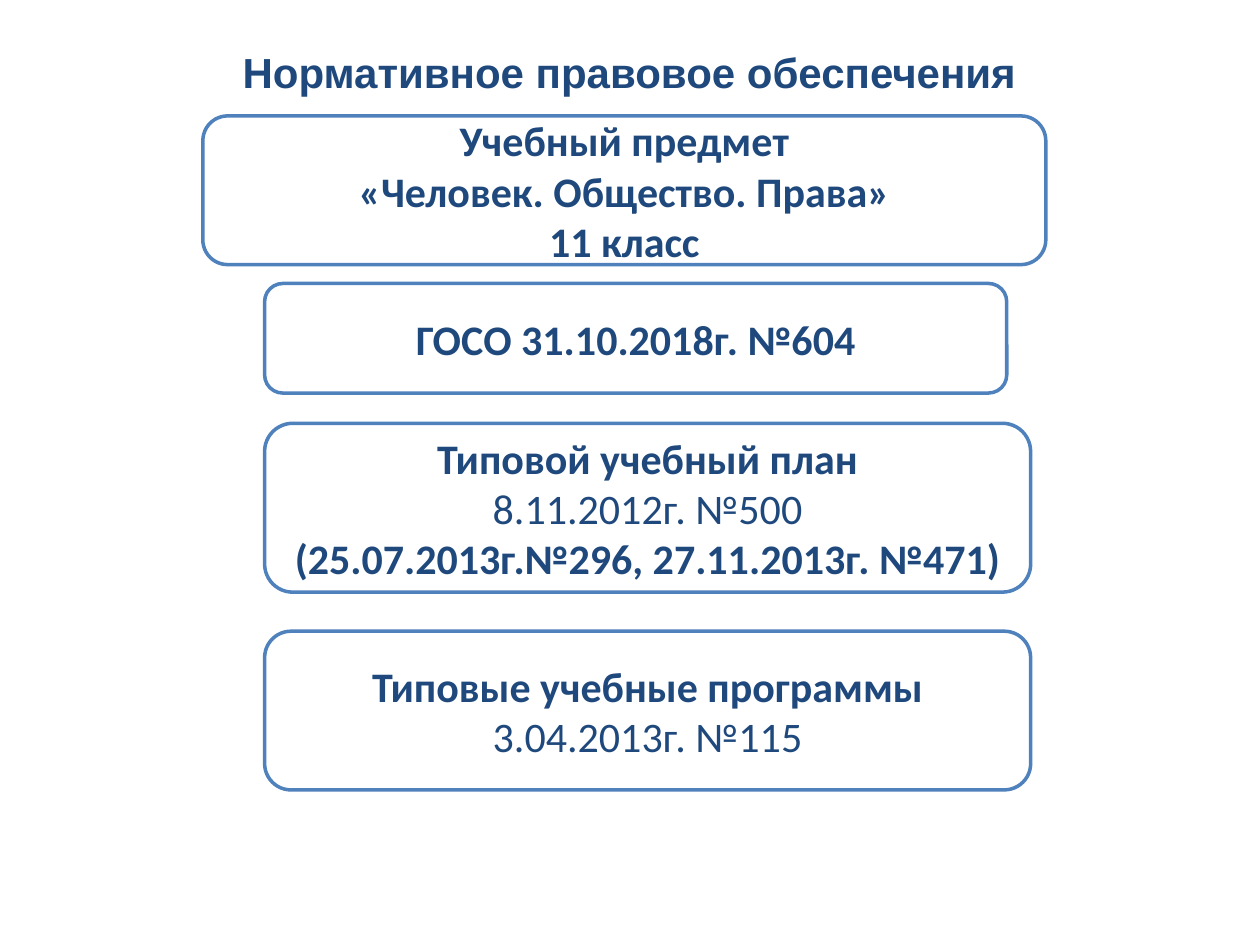
from typing import NamedTuple

from pptx import Presentation
from pptx.dml.color import RGBColor
from pptx.enum.shapes import MSO_SHAPE
from pptx.enum.text import MSO_ANCHOR, PP_ALIGN
from pptx.util import Inches, Pt

ROUNDED = MSO_SHAPE.ROUNDED_RECTANGLE
MIDDLE = MSO_ANCHOR.MIDDLE
CENTER = PP_ALIGN.CENTER
NAVY = "1F497D"
BLUE = "4F81BD"
WHITE = "FFFFFF"


class Line(NamedTuple):
    """One line of text and its weight."""

    text: str
    bold: bool = True


class Card(NamedTuple):
    """A rounded card, placed in inches."""

    left: float
    top: float
    width: float
    height: float
    lines: tuple[Line, ...]


TITLE = Card(1.61, 0.21, 6.77, 0.71, (Line("Нормативное правовое обеспечения"),))
CARDS = (
    Card(1.61, 0.92, 6.69, 1.18, (
        Line("Учебный предмет"),
        Line("«Человек. Общество. Права»"),
        Line("11 класс"),
    )),
    Card(2.1, 2.25, 5.89, 0.87, (Line("ГОСО 31.10.2018г. №604"),)),
    Card(2.1, 3.36, 6.08, 1.34, (
        Line("Типовой учебный план"),
        Line("8.11.2012г. №500", bold=False),
        Line("(25.07.2013г.№296, 27.11.2013г. №471)"),
    )),
    Card(2.1, 5.01, 6.08, 1.26, (
        Line("Типовые учебные программы"),
        Line("3.04.2013г. №115", bold=False),
    )),
)


def color(value: str) -> RGBColor:
    """Turn a hex string into a colour."""
    return RGBColor.from_string(value)


def bounds(card: Card) -> tuple[int, ...]:
    """Return the place and size of a card as lengths."""
    return tuple(Inches(length) for length in card[:4])


def add_text(para, text: str, *, bold: bool, font: str, size: float = 24, ink: str = NAVY) -> None:
    """Write one centred, formatted span into a paragraph."""
    para.alignment = CENTER
    span = para.add_run()
    span.text = text
    span.font.name = font
    span.font.size = Pt(size)
    span.font.bold = bold
    span.font.color.rgb = color(ink)


def fill_text(box, lines: tuple[Line, ...], font: str) -> None:
    """Write the lines as paragraphs centred in a box."""
    frame = box.text_frame
    frame.word_wrap = True
    frame.vertical_anchor = MIDDLE
    for index, line in enumerate(lines):
        para = frame.add_paragraph() if index else frame.paragraphs[0]
        add_text(para, line.text, bold=line.bold, font=font)


def draw_card(slide, card: Card) -> None:
    """Draw an outlined rounded card with its text."""
    box = slide.shapes.add_shape(ROUNDED, *bounds(card))
    box.shadow.inherit = False
    box.fill.solid()
    box.fill.fore_color.rgb = color(WHITE)
    box.line.color.rgb = color(BLUE)
    box.line.width = Pt(2)
    fill_text(box, card.lines, "Calibri")


def main() -> None:
    """Build the slide and save the deck."""
    deck = Presentation()
    deck.slide_width = Inches(10)
    deck.slide_height = Inches(7.5)
    slide = deck.slides.add_slide(deck.slide_layouts[6])
    fill_text(slide.shapes.add_textbox(*bounds(TITLE)), TITLE.lines, "Arial")
    for card in CARDS:
        draw_card(slide, card)
    deck.save("out.pptx")


if __name__ == "__main__":
    main()
